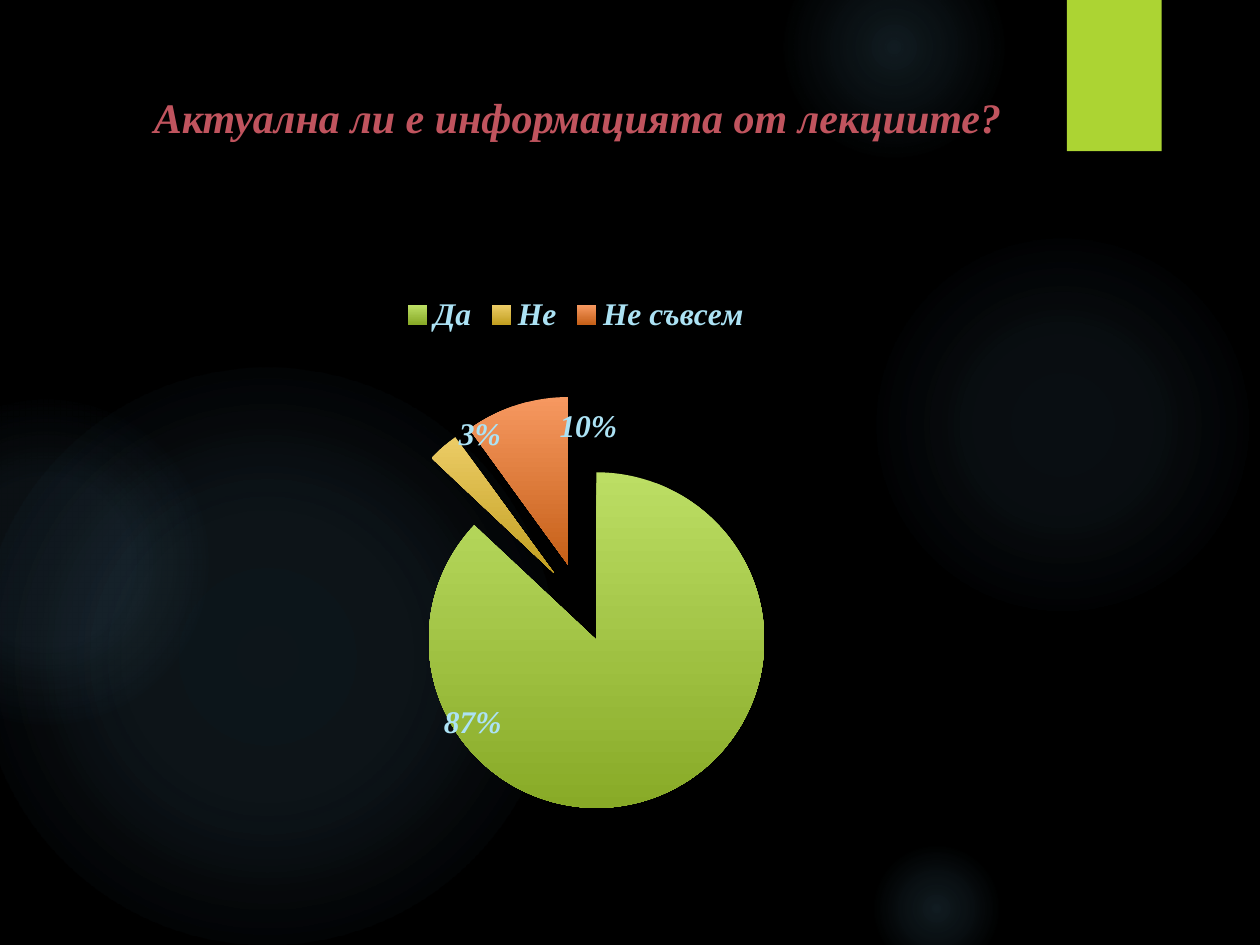
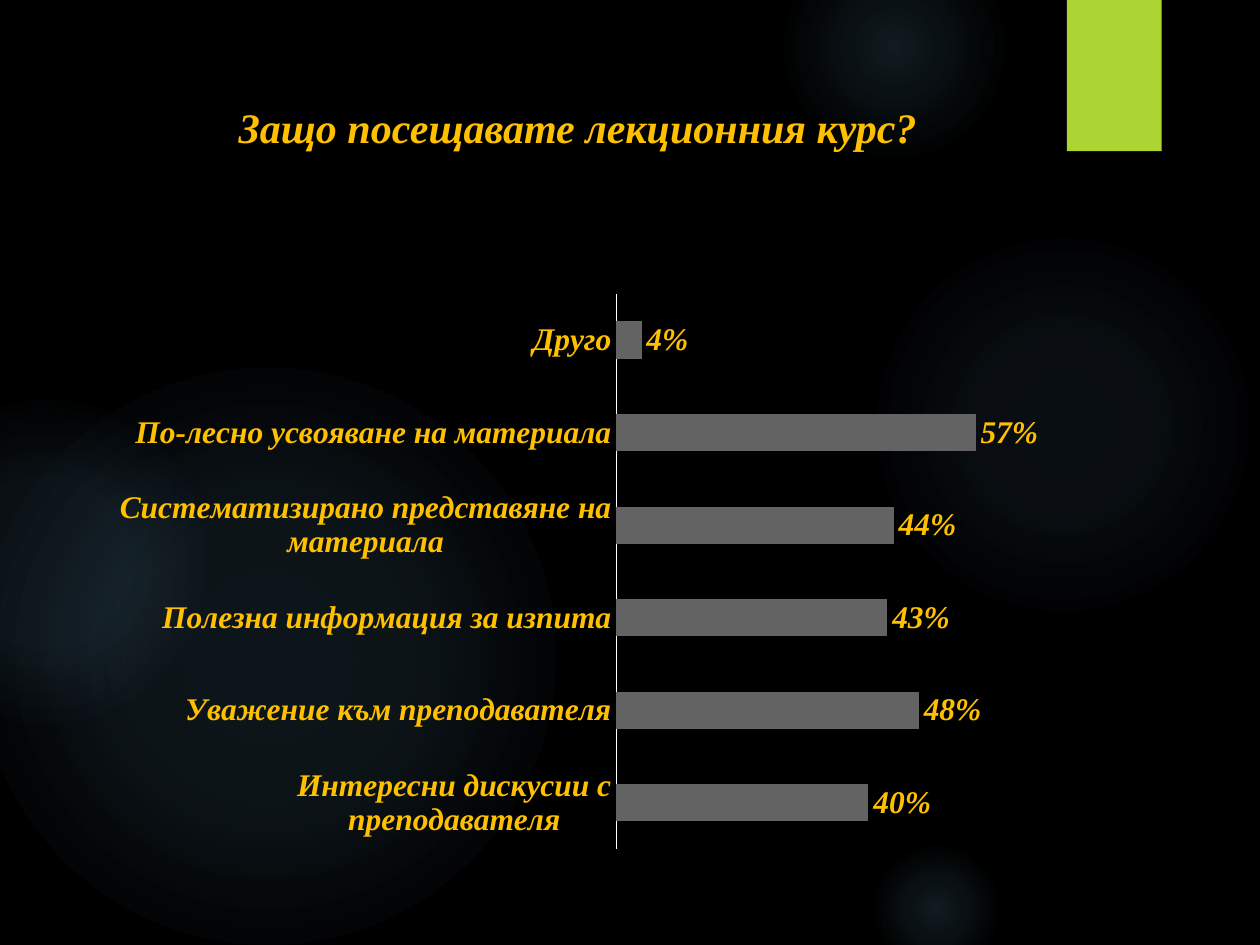
"""Builds two survey slides about a lecture course: a pie chart and a bar chart."""
import pptx
import pptx.chart.data
import pptx.dml.color
import pptx.enum.chart
import pptx.enum.shapes
import pptx.enum.text
import pptx.oxml
import pptx.oxml.ns
import pptx.util

Cm = pptx.util.Cm
Pt = pptx.util.Pt
RGBColor = pptx.dml.color.RGBColor
qn = pptx.oxml.ns.qn

BLACK = RGBColor(0x00, 0x00, 0x00)
WHITE = RGBColor(0xFF, 0xFF, 0xFF)
GLOW = RGBColor(0x7A, 0xC4, 0xF0)
LIME = RGBColor(0xAC, 0xD4, 0x33)
ROSE = RGBColor(0xC0, 0x54, 0x5E)
AMBER = RGBColor(0xFF, 0xC0, 0x00)
PALE_BLUE = RGBColor(0xAC, 0xE2, 0xF4)
BAR_GRAY = RGBColor(0x63, 0x63, 0x63)
SLICE_SHADES = [
    (RGBColor(0xBC, 0xDE, 0x64), RGBColor(0x88, 0xAA, 0x27)),
    (RGBColor(0xEC, 0xCC, 0x66), RGBColor(0xC2, 0x9F, 0x20)),
    (RGBColor(0xF6, 0x98, 0x60), RGBColor(0xC6, 0x60, 0x18)),
]
BASE_FONT = "League Spartan"
TEXT_FONT = "Times New Roman"
GLOWS = [
    (17.5, 4.65, 7.82, [(0, 7), (36, 6), (69, 0)]),
    (15.8, -1.27, 4.45, [(0, 14), (36, 7), (73, 0)]),
    (17.5, 16.94, 2.74, [(0, 14), (36, 7), (66, 0)]),
    (-0.43, 7.42, 11.63, [(0, 11), (36, 10), (75, 0)]),
    (-2.34, 8.05, 6.55, [(0, 8), (36, 8), (72, 0)]),
]
PIE_LABEL_SHIFTS = [(-0.17, 0.01), (-0.02, -0.13), (0.05, -0.1)]
NAMESPACES = pptx.oxml.ns.nsdecls("a", "c")


def make_element(tag, content, attributes=""):
    """Return an XML element with the drawing and chart namespaces."""
    return pptx.oxml.parse_xml(f"<{tag} {NAMESPACES} {attributes}>{content}</{tag}>")


def style_font(font, color, size=18):
    """Apply the bold italic text style."""
    font.name = TEXT_FONT
    font.size = Pt(size)
    font.bold = True
    font.italic = True
    font.color.rgb = color


def add_plain_shape(page, kind, left, top, width, height):
    """Add a shape without outline or inherited shadow."""
    shape = page.shapes.add_shape(kind, Cm(left), Cm(top), Cm(width), Cm(height))
    shape.shadow.inherit = False
    shape.line.fill.background()
    return shape


def add_glow(page, left, top, size, stops):
    """Add a circle that fades out from its centre."""
    circle = add_plain_shape(page, pptx.enum.shapes.MSO_SHAPE.OVAL, left, top, size, size)
    stop_list = "".join(
        f'<a:gs pos="{place * 1000}"><a:srgbClr val="{GLOW}">'
        f'<a:alpha val="{opacity * 1000}"/></a:srgbClr></a:gs>'
        for place, opacity in stops)
    gradient = make_element(
        "a:gradFill",
        f'<a:gsLst>{stop_list}</a:gsLst><a:path path="circle">'
        '<a:fillToRect l="50000" t="50000" r="50000" b="50000"/></a:path>')
    circle._element.spPr.find(qn("a:prstGeom")).addnext(gradient)


def add_ribbon(page):
    """Add the lime ribbon with its soft shadow."""
    ribbon = add_plain_shape(
        page, pptx.enum.shapes.MSO_SHAPE.RECTANGLE, 21.51, 0, 1.91, 3.05)
    ribbon.fill.solid()
    ribbon.fill.fore_color.rgb = LIME
    shadow = make_element(
        "a:outerShdw", '<a:srgbClr val="000000"><a:alpha val="45000"/></a:srgbClr>',
        f'blurRad="{Pt(3)}" dist="{Pt(2)}" dir="5400000" rotWithShape="0"')
    ribbon._element.spPr.find(qn("a:effectLst")).append(shadow)


def add_title(page, text, top, height, color):
    """Add the centred slide title."""
    box = page.shapes.add_textbox(Cm(1.27), Cm(top), Cm(20.75), Cm(height))
    frame = box.text_frame
    frame.word_wrap = True
    frame.vertical_anchor = pptx.enum.text.MSO_ANCHOR.TOP
    frame.text = text
    para = frame.paragraphs[0]
    para.alignment = pptx.enum.text.PP_ALIGN.CENTER
    style_font(para.runs[0].font, color, 24)


def add_page(deck, title, top, height, color):
    """Add a page with the shared backdrop and a title."""
    page = deck.slides.add_slide(deck.slide_layouts[6])
    page.background.fill.solid()
    page.background.fill.fore_color.rgb = BLACK
    for glow in GLOWS:
        add_glow(page, *glow)
    add_ribbon(page)
    add_title(page, title, top, height, color)
    return page


def add_survey_chart(page, kind, answers, number_format, area):
    """Add a one-series chart whose plot fills the given share of its frame."""
    data = pptx.chart.data.CategoryChartData(number_format=number_format)
    data.categories = list(answers)
    data.add_series("Series 1", list(answers.values()))
    chart = page.shapes.add_chart(
        kind, Cm(2.29), Cm(5.69), Cm(18.64), Cm(11.66), data).chart
    chart.has_title = False
    chart.has_legend = False
    chart.font.name = BASE_FONT
    chart.font.size = Pt(18)
    chart.font.color.rgb = WHITE
    plot_area = chart._chartSpace.chart.plotArea
    for old_layout in plot_area.findall(qn("c:layout")):
        plot_area.remove(old_layout)
    modes = '<c:layoutTarget val="inner"/><c:xMode val="edge"/><c:yMode val="edge"/>'
    sizes = "".join(f'<c:{side} val="{share}"/>' for side, share in zip("xywh", area))
    plot_area.insert(0, make_element(
        "c:layout", f"<c:manualLayout>{modes}{sizes}</c:manualLayout>"))
    return chart


def style_slice(point, shades):
    """Fill a slice with a vertical gradient."""
    fill = point.format.fill
    fill.gradient()
    fill.gradient_angle = 270
    for stop, shade in zip(fill.gradient_stops, shades):
        stop.color.rgb = shade
    point.format.line.fill.background()


def add_pie(page, answers):
    """Add the exploded pie with percentages and a legend on top."""
    chart = add_survey_chart(
        page, pptx.enum.chart.XL_CHART_TYPE.PIE, answers, "General",
        (0.28, 0.19, 0.45, 0.73))
    chart.has_legend = True
    chart.legend.position = pptx.enum.chart.XL_LEGEND_POSITION.TOP
    chart.legend.include_in_layout = False
    style_font(chart.legend.font, PALE_BLUE)
    chart.plots[0].vary_by_categories = True
    series = chart.plots[0].series[0]
    for index, shades in enumerate(SLICE_SHADES):
        point = series.points[index]
        style_slice(point, shades)
        style_font(point.data_label.font, PALE_BLUE)
        point.data_label.position = pptx.enum.chart.XL_LABEL_POSITION.CENTER
    series_xml = series._element
    series_xml.find(qn("c:dPt")).addprevious(make_element("c:explosion", "", 'val="24"'))
    labels = series_xml.find(qn("c:dLbls"))
    for label, (across, down) in zip(labels.findall(qn("c:dLbl")), PIE_LABEL_SHIFTS):
        label.find(qn("c:idx")).addnext(make_element(
            "c:layout", f'<c:manualLayout><c:x val="{across}"/>'
            f'<c:y val="{down}"/></c:manualLayout>'))
    for tag, shown in (("c:showVal", "0"), ("c:showPercent", "1"),
                       ("c:showLeaderLines", "0")):
        for switch in labels.iter(qn(tag)):
            switch.set("val", shown)


def add_bars(page, answers):
    """Add the horizontal bars with value labels."""
    chart = add_survey_chart(
        page, pptx.enum.chart.XL_CHART_TYPE.BAR_CLUSTERED, answers, "0%",
        (0.545, 0.02, 0.41, 0.96))
    plot = chart.plots[0]
    plot.vary_by_categories = False
    plot.gap_width = 150
    bars = plot.series[0].format
    bars.fill.solid()
    bars.fill.fore_color.rgb = BAR_GRAY
    plot.has_data_labels = True
    labels = plot.data_labels
    labels.show_value = True
    labels.number_format = "0%"
    labels.number_format_is_linked = False
    labels.position = pptx.enum.chart.XL_LABEL_POSITION.OUTSIDE_END
    style_font(labels.font, AMBER)
    reasons = chart.category_axis
    reasons.major_tick_mark = pptx.enum.chart.XL_TICK_MARK.NONE
    reasons.format.line.color.rgb = WHITE
    reasons.format.line.width = Pt(0.75)
    style_font(reasons.tick_labels.font, AMBER)
    shares = chart.value_axis
    shares.minimum_scale = 0
    shares.maximum_scale = 0.6
    shares.has_major_gridlines = False
    shares.visible = False


def main():
    """Build and save the deck."""
    deck = pptx.Presentation()
    deck.slide_width = Cm(25.4)
    deck.slide_height = Cm(19.05)
    page = add_page(deck, "Актуална ли е информацията от лекциите?", 1.73, 2.21, ROSE)
    add_pie(page, {"Да": 87, "Не": 3, "Не съвсем": 10})
    page = add_page(deck, "Защо посещавате лекционния курс?", 1.93, 2.01, AMBER)
    add_bars(page, {
        "Интересни дискусии с преподавателя": 0.4,
        "Уважение към преподавателя": 0.48,
        "Полезна информация за изпита": 0.43,
        "Систематизирано представяне на материала": 0.44,
        "По-лесно усвояване на материала": 0.57,
        "Друго": 0.04,
    })
    deck.save("out.pptx")


if __name__ == "__main__":
    main()
